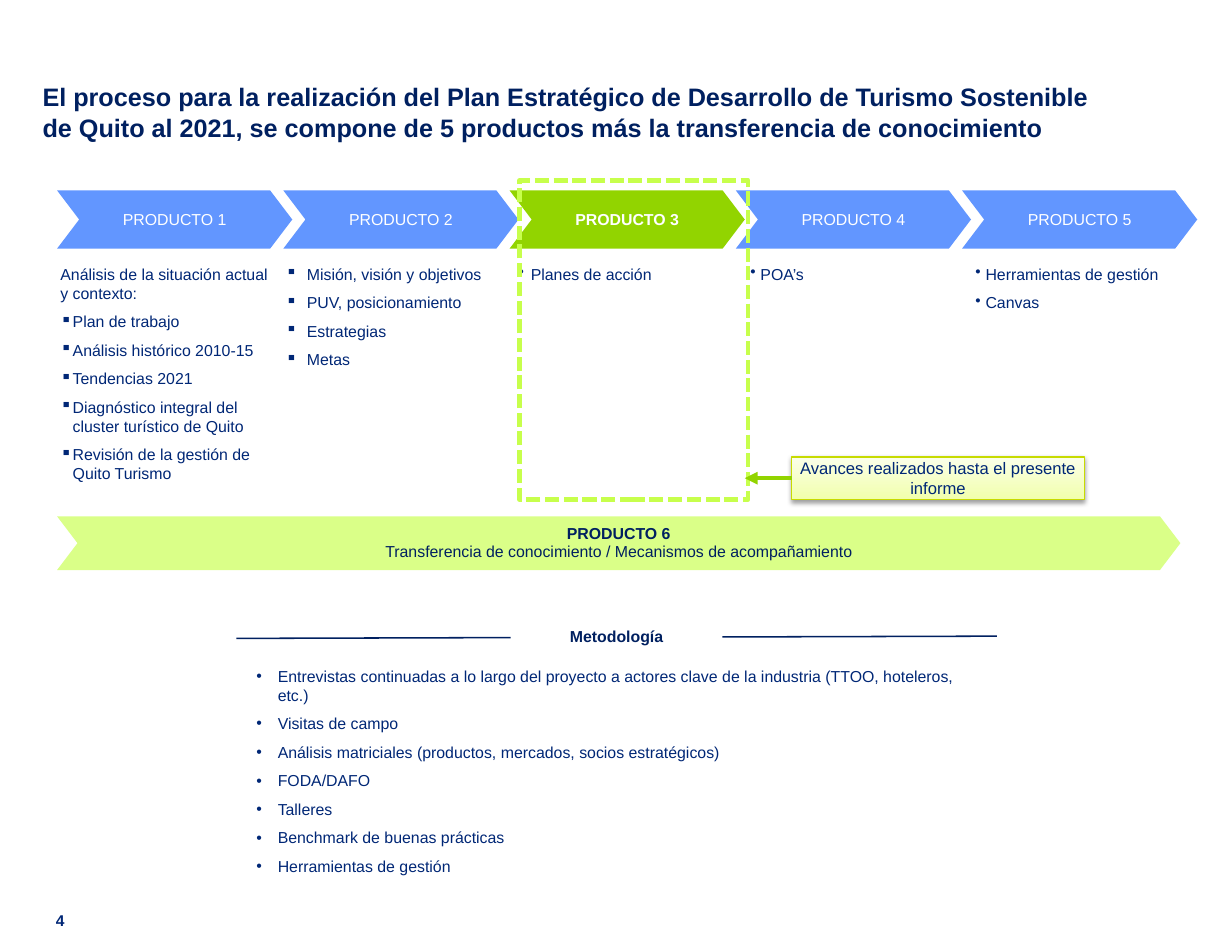
"""Build the slide on the products and methodology of the Quito tourism plan."""
from dataclasses import dataclass

from lxml import etree
from pptx import Presentation
from pptx.dml.color import RGBColor
from pptx.enum.dml import MSO_LINE
from pptx.enum.shapes import MSO_CONNECTOR, MSO_SHAPE
from pptx.enum.text import MSO_ANCHOR, MSO_AUTO_SIZE, PP_ALIGN
from pptx.oxml import parse_xml
from pptx.oxml.ns import nsdecls, qn
from pptx.util import Inches, Pt

CHEVRON, RECTANGLE = MSO_SHAPE.CHEVRON, MSO_SHAPE.RECTANGLE
STRAIGHT, DASHED = MSO_CONNECTOR.STRAIGHT, MSO_LINE.SQUARE_DOT
LEFT, CENTER = PP_ALIGN.LEFT, PP_ALIGN.CENTER
TOP, MIDDLE, BOTTOM = MSO_ANCHOR.TOP, MSO_ANCHOR.MIDDLE, MSO_ANCHOR.BOTTOM


@dataclass(frozen=True)
class Theme:
    font: str = "Arial"
    navy: str = "002060"
    text: str = "002776"
    white: str = "FFFFFF"
    blue: str = "6296FF"
    green: str = "92D400"
    lime: str = "C7FF4C"
    pale: str = "DAFF88"
    note_edge: str = "C7DB00"
    note_bottom: str = "F1FFAC"
    note_top: str = "FBFFE9"
    title_size: float = 16.2
    body_size: float = 10.2
    note_size: float = 10.7
    number_size: float = 10


THEME = Theme()

TITLE = ("El proceso para la realización del Plan Estratégico de Desarrollo de Turismo "
         "Sostenible de Quito al 2021, se compone de 5 productos más la transferencia "
         "de conocimiento")
PRODUCTS = [
    dict(name="PRODUCTO 1", intro="Análisis de la situación actual y contexto:",
         items=["Plan de trabajo", "Análisis histórico 2010-15", "Tendencias 2021",
                "Diagnóstico integral del cluster turístico de Quito",
                "Revisión de la gestión de Quito Turismo"],
         bullet="▪", indent=0.11, shift=0.02),
    dict(name="PRODUCTO 2",
         items=["Misión, visión y objetivos", "PUV, posicionamiento", "Estrategias", "Metas"],
         bullet="▪", indent=0.19, shift=0.01),
    dict(name="PRODUCTO 3", items=["Planes de acción"],
         bullet="•", indent=0.11, shift=0.07, current=True),
    dict(name="PRODUCTO 4", items=["POA’s"], bullet="•", indent=0.09, shift=0.12),
    dict(name="PRODUCTO 5", items=["Herramientas de gestión", "Canvas"],
         bullet="•", indent=0.09, shift=0.11),
]
TRANSFER = ["PRODUCTO 6", "Transferencia de conocimiento / Mecanismos de acompañamiento"]
PROGRESS = "Avances realizados hasta el presente informe"
METHOD_HEADING = "Metodología"
METHODS = [
    "Entrevistas continuadas a lo largo del proyecto a actores clave de la industria "
    "(TTOO, hoteleros, etc.)",
    "Visitas de campo",
    "Análisis matriciales (productos, mercados, socios estratégicos)",
    "FODA/DAFO",
    "Talleres",
    "Benchmark de buenas prácticas",
    "Herramientas de gestión",
]
PAGE = "4"

WIDTH, HEIGHT = 11, 8.5
MARGIN, COLUMN = 0.51, 2.02
STEP_WIDTH, STEP_TOP, STEP_HEIGHT = 2.1, 1.7, 0.52
LIST_TOP, LIST_WIDTH, LIST_HEIGHT = 2.35, 1.97, 2
NOTE_LEFT, NOTE_TOP, NOTE_WIDTH, NOTE_HEIGHT = 7.07, 4.08, 2.61, 0.38
FRAME_RIGHT = 6.68


def rgb(value):
    return RGBColor.from_string(value)


def place(shape, box):
    shape.left, shape.top, shape.width, shape.height = map(Inches, box)


def write(shape, lines, size=THEME.body_size, color=THEME.text, bold=False, align=LEFT,
          anchor=TOP, inset=(0.01, 0.01), spacing=None, after=0, bullet=None, indent=0, plain=0):
    frame = shape.text_frame
    frame.word_wrap, frame.auto_size, frame.vertical_anchor = True, MSO_AUTO_SIZE.NONE, anchor
    frame.margin_left = frame.margin_right = Inches(inset[0])
    frame.margin_top = frame.margin_bottom = Inches(inset[1])
    for index, line in enumerate(lines):
        paragraph = frame.paragraphs[0] if index == 0 else frame.add_paragraph()
        paragraph.text = line
        if bullet and index >= plain:
            properties = paragraph._p.get_or_add_pPr()
            properties.set("marL", str(Inches(indent)))
            properties.set("indent", str(-Inches(indent)))
            etree.SubElement(properties, qn("a:buChar")).set("char", bullet)
        paragraph.alignment = align
        paragraph.space_before, paragraph.space_after = Pt(0), Pt(after)
        if spacing:
            paragraph.line_spacing = spacing
        font = paragraph.font
        font.name, font.size, font.bold = THEME.font, Pt(size), bold
        font.color.rgb = rgb(color)


def add_text(slide, box, lines, **style):
    write(slide.shapes.add_textbox(*map(Inches, box)), lines, **style)


def add_block(slide, kind, box, fill=None):
    block = slide.shapes.add_shape(kind, *map(Inches, box))
    block.shadow.inherit = False
    block.line.fill.background()
    if fill:
        block.fill.solid()
        block.fill.fore_color.rgb = rgb(fill)
    else:
        block.fill.background()
    return block


def add_chevron(slide, box, fill, lines, **style):
    chevron = add_block(slide, CHEVRON, box, fill)
    chevron.adjustments[0] = 0.38
    write(chevron, lines, align=CENTER, anchor=MIDDLE, inset=(0.04, 0.05), **style)
    return chevron


def add_line(slide, start, end, color, width):
    line = slide.shapes.add_connector(STRAIGHT, *map(Inches, start + end))
    line.line.color.rgb, line.line.width = rgb(color), Pt(width)
    etree.SubElement(line._element.spPr, qn("a:effectLst"))
    return line


def add_products(slide):
    for index, product in enumerate(PRODUCTS):
        left = MARGIN + index * COLUMN
        current = product.get("current", False)
        add_chevron(slide, (left, STEP_TOP, STEP_WIDTH, STEP_HEIGHT),
                    THEME.green if current else THEME.blue,
                    [product["name"]], color=THEME.white, bold=current)
        intro = [product["intro"]] if "intro" in product else []
        add_text(slide, (left + product["shift"], LIST_TOP, LIST_WIDTH, LIST_HEIGHT),
                 intro + product["items"], after=6.1, bullet=product["bullet"],
                 indent=product["indent"], plain=len(intro))


def add_progress(slide):
    frame = add_block(slide, RECTANGLE, (4.64, 1.61, FRAME_RIGHT - 4.64, 2.85))
    frame.line.color.rgb, frame.line.width = rgb(THEME.lime), Pt(3)
    frame.line.dash_style = DASHED

    note = add_block(slide, RECTANGLE, (NOTE_LEFT, NOTE_TOP, NOTE_WIDTH, NOTE_HEIGHT))
    note.fill.gradient()
    note.fill.gradient_angle = 90
    for stop, color, position in zip(note.fill.gradient_stops,
                                     (THEME.note_bottom, THEME.note_top), (0, 1)):
        stop.color.rgb, stop.position = rgb(color), position
    note.line.color.rgb, note.line.width = rgb(THEME.note_edge), Pt(0.75)
    note._element.spPr.find(qn("a:effectLst")).append(parse_xml(
        f'<a:outerShdw {nsdecls("a")} blurRad="{Pt(3.1)}" dist="{Pt(1.6)}" dir="5400000" '
        'rotWithShape="0"><a:srgbClr val="000000"><a:alpha val="38000"/></a:srgbClr>'
        '</a:outerShdw>'))
    write(note, [PROGRESS], size=THEME.note_size, align=CENTER)

    middle = NOTE_TOP + NOTE_HEIGHT / 2
    arrow = add_line(slide, (NOTE_LEFT, middle), (FRAME_RIGHT - 0.03, middle), THEME.green, 2.75)
    etree.SubElement(arrow.line._get_or_add_ln(), qn("a:tailEnd")).set("type", "triangle")


def add_methodology(slide, methods):
    add_line(slide, (2.11, 5.7), (8.9, 5.68), THEME.navy, 1)
    heading = add_block(slide, RECTANGLE, (4.56, 5.61, 1.89, 0.16), THEME.white)
    write(heading, [METHOD_HEADING], color=THEME.navy, bold=True, align=CENTER,
          anchor=BOTTOM, inset=(0.08, 0), spacing=0.95)
    place(methods, (2.28, 5.94, 6.54, 1.72))
    write(methods, METHODS, after=6.1, bullet="•", indent=0.19)


def main():
    deck = Presentation()
    deck.slide_width, deck.slide_height = Inches(WIDTH), Inches(HEIGHT)
    slide = deck.slides.add_slide(deck.slide_layouts[1])
    title, methods = slide.placeholders
    place(title, (0.38, 0.73, 9.52, 0.7))
    write(title, [TITLE], size=THEME.title_size, color=THEME.navy, bold=True, inset=(0, 0))
    add_text(slide, (MARGIN - 0.01, 8.13, 0.34, 0.18), [PAGE], size=THEME.number_size,
             bold=True, inset=(0, 0), spacing=Pt(12))
    add_methodology(slide, methods)
    add_products(slide)
    add_progress(slide)
    transfer = add_chevron(slide, (MARGIN, 4.61, 10.03, 0.48), THEME.pale, TRANSFER,
                           color=THEME.navy, spacing=0.95)
    transfer.text_frame.paragraphs[0].font.bold = True
    deck.save("out.pptx")


if __name__ == "__main__":
    main()
